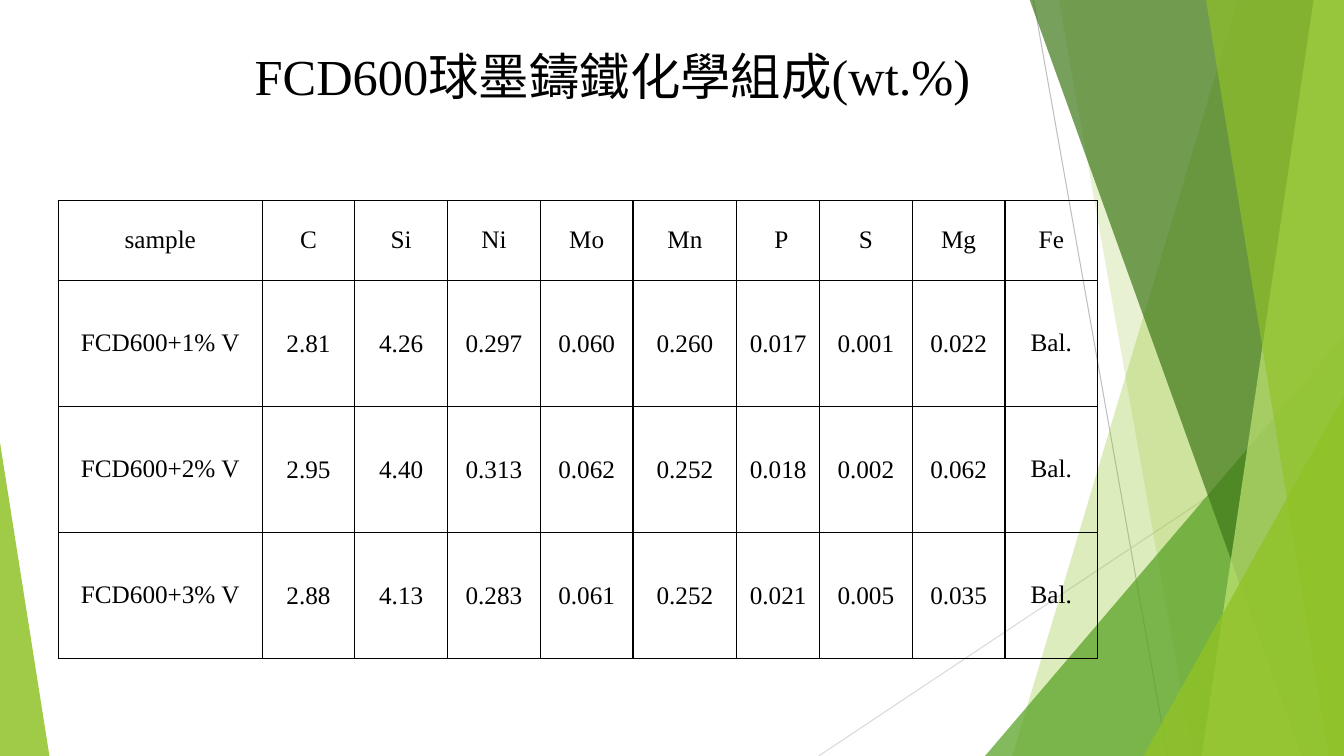
from dataclasses import dataclass

from lxml import etree
from pptx import Presentation
from pptx.dml.color import RGBColor
from pptx.enum.shapes import MSO_CONNECTOR, MSO_SHAPE
from pptx.enum.text import MSO_ANCHOR, PP_ALIGN
from pptx.oxml.ns import qn
from pptx.util import Inches, Pt

TRIANGLE = MSO_SHAPE.ISOSCELES_TRIANGLE
STRAIGHT = MSO_CONNECTOR.STRAIGHT
CENTER = PP_ALIGN.CENTER
MIDDLE, TOP = MSO_ANCHOR.MIDDLE, MSO_ANCHOR.TOP


@dataclass(frozen=True)
class Theme:
    font: str = "Times New Roman"
    title_size: int = 36
    table_size: int = 18
    ink: str = "000000"
    lime: str = "90C226"
    green: str = "54A021"
    forest: str = "3F7819"
    pale: str = "C0E474"
    ray: str = "BFBFBF"
    faint_ray: str = "D9D9D9"


THEME = Theme()
WIDTH, HEIGHT = 13.33, 7.5
BEAM_TOP = -0.01


def paint(shape, color, opacity):
    """Give a shape a see-through fill with no outline or shadow."""
    shape.shadow.inherit = False
    shape.line.fill.background()
    shape.fill.solid()
    shape.fill.fore_color.rgb = RGBColor.from_string(color)
    for fill_color in shape.fill._xPr.iter(qn("a:srgbClr")):
        etree.SubElement(fill_color, qn("a:alpha"), val=str(opacity * 1000))


def write_centered(frame, text, size):
    frame.text = text
    paragraph = frame.paragraphs[0]
    paragraph.alignment = CENTER
    font = paragraph.runs[0].font
    font.name = THEME.font
    font.size = Pt(size)
    font.color.rgb = RGBColor.from_string(THEME.ink)


prs = Presentation()
prs.slide_width, prs.slide_height = Inches(WIDTH), Inches(HEIGHT)
slide = prs.slides.add_slide(prs.slide_layouts[6])
shapes = slide.shapes

# Thin rays behind the beams
for x1, y1, x2, y2, color in [
    (10.25, 0, 11.58, HEIGHT, THEME.ray),
    (WIDTH, 4.03, 8.12, HEIGHT, THEME.faint_ray),
]:
    ray = shapes.add_connector(STRAIGHT, Inches(x1), Inches(y1), Inches(x2), Inches(y2))
    ray.line.color.rgb = RGBColor.from_string(color)
    ray.line.width = Pt(0.75)
    etree.SubElement(ray._element.spPr, qn("a:effectLst"))

# Beams run from a slanted left edge (top x, bottom x) to the right slide edge;
# wedges are right triangles (left, top, width, apex) standing on the bottom edge.
decorations = [
    ("beam", (12.28, 10.04), THEME.lime, 30),
    ("beam", (10.5, 11.83), THEME.lime, 20),
    ("wedge", (9.77, 3.33, 3.56, 1), THEME.green, 72),
    ("beam", (10.21, 12.91), THEME.forest, 70),
    ("beam", (13.03, 11.92), THEME.pale, 70),
    ("beam", (11.96, 13.18), THEME.lime, 65),
    ("wedge", (11.34, 3.93, 1.99, 1), THEME.lime, 80),
    ("wedge", (0, 4.39, 0.49, 0), THEME.lime, 85),
]
for kind, geometry, color, opacity in decorations:
    if kind == "beam":
        top_x, bottom_x = geometry
        outline = shapes.build_freeform(Inches(top_x), Inches(BEAM_TOP))
        corners = [(WIDTH, BEAM_TOP), (WIDTH, HEIGHT), (bottom_x, HEIGHT)]
        outline.add_line_segments([(Inches(x), Inches(y)) for x, y in corners], close=True)
        decoration = outline.convert_to_shape()
    else:
        left, top, width, apex = geometry
        decoration = shapes.add_shape(
            TRIANGLE, Inches(left), Inches(top), Inches(width), Inches(HEIGHT - top))
        decoration.adjustments[0] = apex
    paint(decoration, color, opacity)

title = shapes.add_textbox(Inches(-0.24), Inches(0.4), Inches(12.63), Inches(1.44)).text_frame
title.word_wrap = True
title.vertical_anchor = TOP
write_centered(title, "FCD600球墨鑄鐵化學組成(wt.%)", THEME.title_size)

# Chemical composition table
composition = [
    ["sample", "C", "Si", "Ni", "Mo", "Mn", " P", "S", "Mg", "Fe"],
    ["FCD600+1% V", "2.81", "4.26", "0.297", "0.060", "0.260", "0.017", "0.001", "0.022", "Bal."],
    ["FCD600+2% V", "2.95", "4.40", "0.313", "0.062", "0.252", "0.018", "0.002", "0.062", "Bal."],
    ["FCD600+3% V", "2.88", "4.13", "0.283", "0.061", "0.252", "0.021", "0.005", "0.035", "Bal."],
]
column_widths = [2.02] + [0.92] * 4 + [1.03, 0.82] + [0.92] * 3
row_heights = [0.79] + [1.25] * 3
table = shapes.add_table(
    len(row_heights), len(column_widths), Inches(0.58), Inches(1.99),
    Inches(sum(column_widths)), Inches(sum(row_heights))).table
table.first_row = table.horz_banding = False
for column, width in zip(table.columns, column_widths):
    column.width = Inches(width)
for row, height in zip(table.rows, row_heights):
    row.height = Inches(height)

for r, sample in enumerate(composition):
    for c, value in enumerate(sample):
        cell = table.cell(r, c)
        is_measured = r > 0 and 0 < c < len(sample) - 1
        cell.margin_left = cell.margin_right = Inches(0.01 if is_measured else 0.07)
        cell.margin_top = Inches(0.01 if is_measured else 0)
        cell.margin_bottom = 0
        cell.vertical_anchor = MIDDLE
        cell.fill.background()
        write_centered(cell.text_frame, value, THEME.table_size)
        properties = cell._tc.get_or_add_tcPr()
        for position, side in enumerate(["a:lnL", "a:lnR", "a:lnT", "a:lnB"]):
            border = etree.Element(qn(side), w=str(Pt(1)))
            border_fill = etree.SubElement(border, qn("a:solidFill"))
            etree.SubElement(border_fill, qn("a:srgbClr"), val=THEME.ink)
            properties.insert(position, border)

prs.save("out.pptx")
